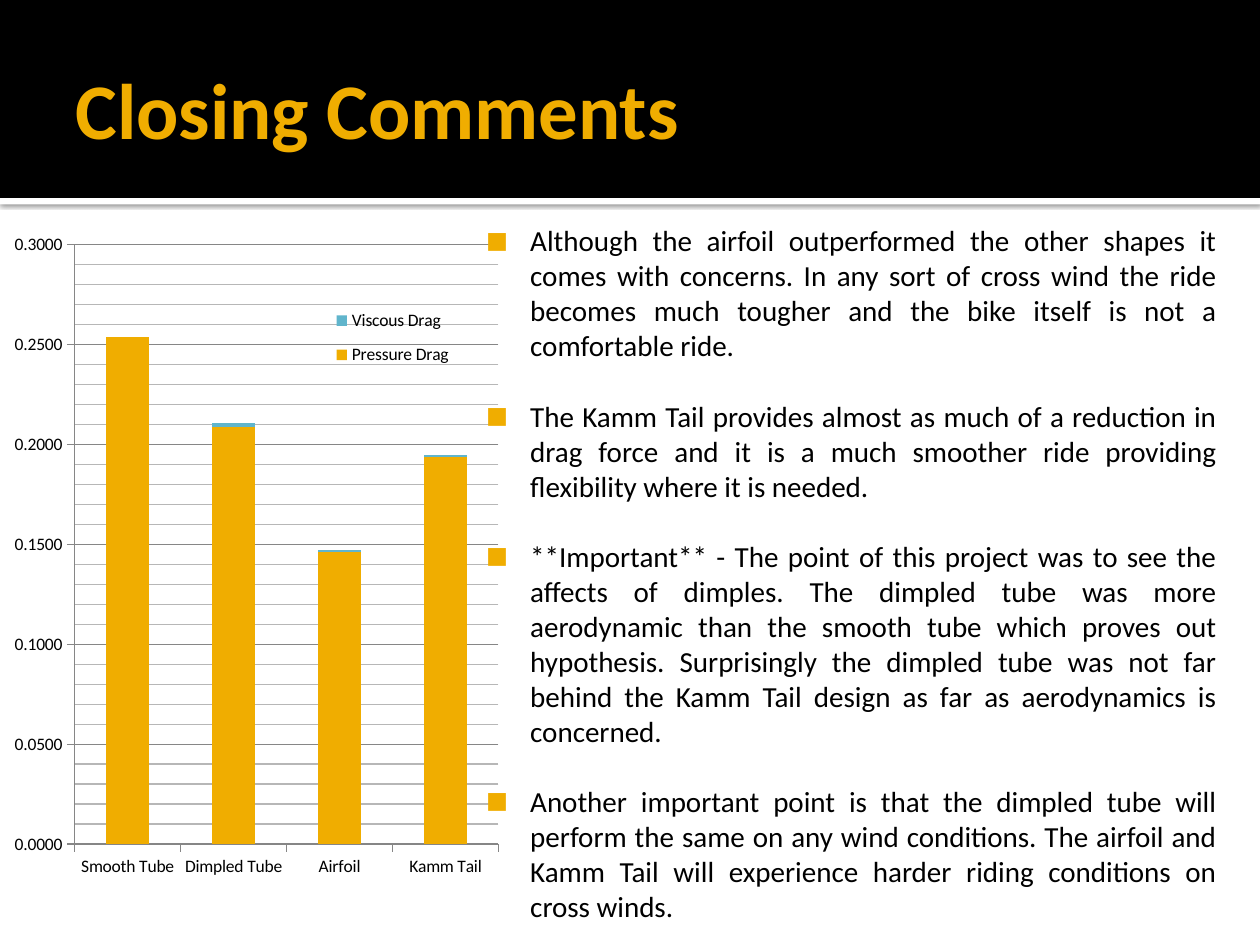
from dataclasses import dataclass

from lxml import etree
from pptx import Presentation
from pptx import util as u
from pptx.chart.data import CategoryChartData
from pptx.dml.color import RGBColor
from pptx.enum import chart as charts, shapes, text
from pptx.oxml import parse_xml
from pptx.oxml.ns import nsdecls, qn


@dataclass(frozen=True)
class Theme:
    font: str = "Calibri"
    black: RGBColor = RGBColor(0, 0, 0)
    white: RGBColor = RGBColor(255, 255, 255)
    gold: RGBColor = RGBColor(0xF0, 0xAD, 0x00)
    blue: RGBColor = RGBColor(0x60, 0xB5, 0xCC)
    axis: RGBColor = RGBColor(0x86, 0x86, 0x86)
    grid: RGBColor = RGBColor(0xB7, 0xB7, 0xB7)
    title_size: float = 45
    body_size: float = 16.6
    line_pitch: float = 20
    chart_size: float = 10


COMMENTS = [
    "Although the airfoil outperformed the other shapes it comes with concerns. "
    "In any sort of cross wind the ride becomes much tougher and the bike itself "
    "is not a comfortable ride.",
    "The Kamm Tail provides almost as much of a reduction in drag force and it is "
    "a much smoother ride providing flexibility where it is needed.",
    "**Important** - The point of this project was to see the affects of dimples. "
    "The dimpled tube was more aerodynamic than the smooth tube which proves out "
    "hypothesis. Surprisingly the dimpled tube was not far behind the Kamm Tail "
    "design as far as aerodynamics is concerned.",
    "Another important point is that the dimpled tube will perform the same on any "
    "wind conditions. The airfoil and Kamm Tail will experience harder riding "
    "conditions on cross winds.",
]
TUBES = ["Smooth Tube", "Dimpled Tube", "Airfoil", "Kamm Tail"]
DRAG = {
    "Pressure Drag": [0.254, 0.209, 0.146, 0.194],
    "Viscous Drag": [0, 0.002, 0.001, 0.001],
}


def assign(target, **values):
    for name, value in values.items():
        setattr(target, name, value)


def cm(*lengths):
    return [u.Cm(length) for length in lengths]


def margins(*lengths):
    sides = ("margin_left", "margin_top", "margin_right", "margin_bottom")
    return dict(zip(sides, cm(*lengths)))


def chart_layout(x, y, w, h, inner=False):
    """Return a manual layout in fractions of the chart's size."""
    target = '<c:layoutTarget val="inner"/>' if inner else ""
    return parse_xml(
        f'<c:layout {nsdecls("c")}><c:manualLayout>{target}'
        '<c:xMode val="edge"/><c:yMode val="edge"/>'
        f'<c:x val="{x}"/><c:y val="{y}"/><c:w val="{w}"/><c:h val="{h}"/>'
        "</c:manualLayout></c:layout>"
    )


class SlideBuilder:
    def __init__(self, slide, theme):
        self.slide = slide
        self.theme = theme

    def style_font(self, font, size, color, bold=False):
        assign(font, name=self.theme.font, size=u.Pt(size), bold=bold)
        font.color.rgb = color

    def band(self, place, color, shadow=False):
        box = self.slide.shapes.add_shape(shapes.MSO_SHAPE.RECTANGLE, *cm(*place))
        box.shadow.inherit = False
        box.fill.solid()
        box.fill.fore_color.rgb = color
        box.line.fill.background()
        if shadow:
            effects = box._element.spPr.find(qn("a:effectLst"))
            effects.append(parse_xml(
                f'<a:outerShdw {nsdecls("a")} blurRad="{u.Pt(2.5)}" '
                f'dist="{u.Pt(0.8)}" dir="5400000" algn="tl" rotWithShape="0">'
                f'<a:srgbClr val="{self.theme.black}"><a:alpha val="60000"/>'
                "</a:srgbClr></a:outerShdw>"
            ))

    def title(self, wording, place):
        box = self.slide.shapes.title
        assign(box, **dict(zip(("left", "top", "width", "height"), cm(*place))))
        self.slide.shapes._spTree.append(box._element)  # in front of the bands
        frame = box.text_frame
        assign(frame, word_wrap=True, auto_size=text.MSO_AUTO_SIZE.NONE,
               vertical_anchor=text.MSO_ANCHOR.MIDDLE,
               **margins(0.25, 0.13, 0.13, 0.13))
        para = frame.paragraphs[0]
        para.alignment = text.PP_ALIGN.LEFT
        span = para.add_run()
        span.text = wording
        self.style_font(span.font, self.theme.title_size, self.theme.gold, True)

    def bullets(self, wordings, place):
        frame = self.slide.shapes.add_textbox(*cm(*place)).text_frame
        assign(frame, word_wrap=True, **margins(0.15, 0.25, 0.25, 0.13))
        pitch = u.Pt(self.theme.line_pitch)
        for index, wording in enumerate(wordings):
            para = frame.add_paragraph() if index else frame.paragraphs[0]
            assign(para, alignment=text.PP_ALIGN.JUSTIFY, line_spacing=pitch,
                   space_before=pitch if index else u.Pt(0))
            span = para.add_run()
            span.text = wording
            self.style_font(span.font, self.theme.body_size, self.theme.black)
            self.square_bullet(para)

    def square_bullet(self, para):
        props = para._p.get_or_add_pPr()
        props.set("marL", str(u.Cm(1.22)))
        props.set("indent", str(u.Cm(-0.89)))
        color = etree.SubElement(props, qn("a:buClr"))
        etree.SubElement(color, qn("a:srgbClr")).set("val", str(self.theme.gold))
        for tag, name, value in (("a:buSzPct", "val", "80000"),
                                 ("a:buFont", "typeface", self.theme.font),
                                 ("a:buChar", "char", "■")):
            etree.SubElement(props, qn(tag)).set(name, value)

    def stacked_columns(self, categories, series, place):
        data = CategoryChartData(number_format="0.0000")
        data.categories = categories
        for name, values in series.items():
            data.add_series(name, values)
        chart = self.slide.shapes.add_chart(
            charts.XL_CHART_TYPE.COLUMN_STACKED, *cm(*place), data).chart
        self.style_font(chart.font, self.theme.chart_size, self.theme.black)
        assign(chart, has_title=False, has_legend=True)
        plot = chart.plots[0]
        assign(plot, gap_width=150, overlap=100, vary_by_categories=False)
        for column, color in zip(plot.series, (self.theme.gold, self.theme.blue)):
            column.format.fill.solid()
            column.format.fill.fore_color.rgb = color
        self.style_axes(chart)
        self.arrange_chart(chart)

    def style_axes(self, chart):
        scale = chart.value_axis
        assign(scale, minimum_scale=0, maximum_scale=0.3, major_unit=0.05,
               minor_unit=0.01, has_major_gridlines=True, has_minor_gridlines=True)
        assign(scale.tick_labels, number_format="0.0000",
               number_format_is_linked=False)
        for axis in (scale, chart.category_axis):
            axis.major_tick_mark = charts.XL_TICK_MARK.OUTSIDE
        for part in (scale, chart.category_axis, scale.major_gridlines):
            part.format.line.color.rgb = self.theme.axis
            part.format.line.width = u.Pt(0.75)
        scale._element.find(qn("c:minorGridlines")).append(parse_xml(
            f'<c:spPr {nsdecls("c", "a")}><a:ln w="{u.Pt(0.75)}"><a:solidFill>'
            f'<a:srgbClr val="{self.theme.grid}"/></a:solidFill></a:ln></c:spPr>'
        ))

    def arrange_chart(self, chart):
        area = chart._chartSpace.chart.plotArea
        for old in area.findall(qn("c:layout")):
            area.remove(old)
        area.insert(0, chart_layout(0.11, 0.035, 0.66, 0.87, inner=True))
        legend = chart.legend
        assign(legend, position=charts.XL_LEGEND_POSITION.RIGHT,
               include_in_layout=True)
        element = legend._element
        for old in element.findall(qn("c:layout")):
            element.remove(old)
        element.find(qn("c:legendPos")).addnext(chart_layout(0.48, 0.11, 0.25, 0.12))


def main():
    theme = Theme()
    deck = Presentation()
    assign(deck, slide_width=u.Cm(25.4), slide_height=u.Cm(19.05))
    page = SlideBuilder(deck.slides.add_slide(deck.slide_layouts[5]), theme)
    page.band((0, 3.99, 25.4, 0.13), theme.white, shadow=True)
    page.band((0, 0, 25.4, 3.99), theme.black)
    page.stacked_columns(TUBES, DRAG, (0.08, 4.45, 12.95, 13.89))
    page.title("Closing Comments", (1.27, 0.43, 22.86, 3.48))
    page.bullets(COMMENTS, (9.32, 4.24, 15.44, 13.97))
    deck.save("out.pptx")


if __name__ == "__main__":
    main()
